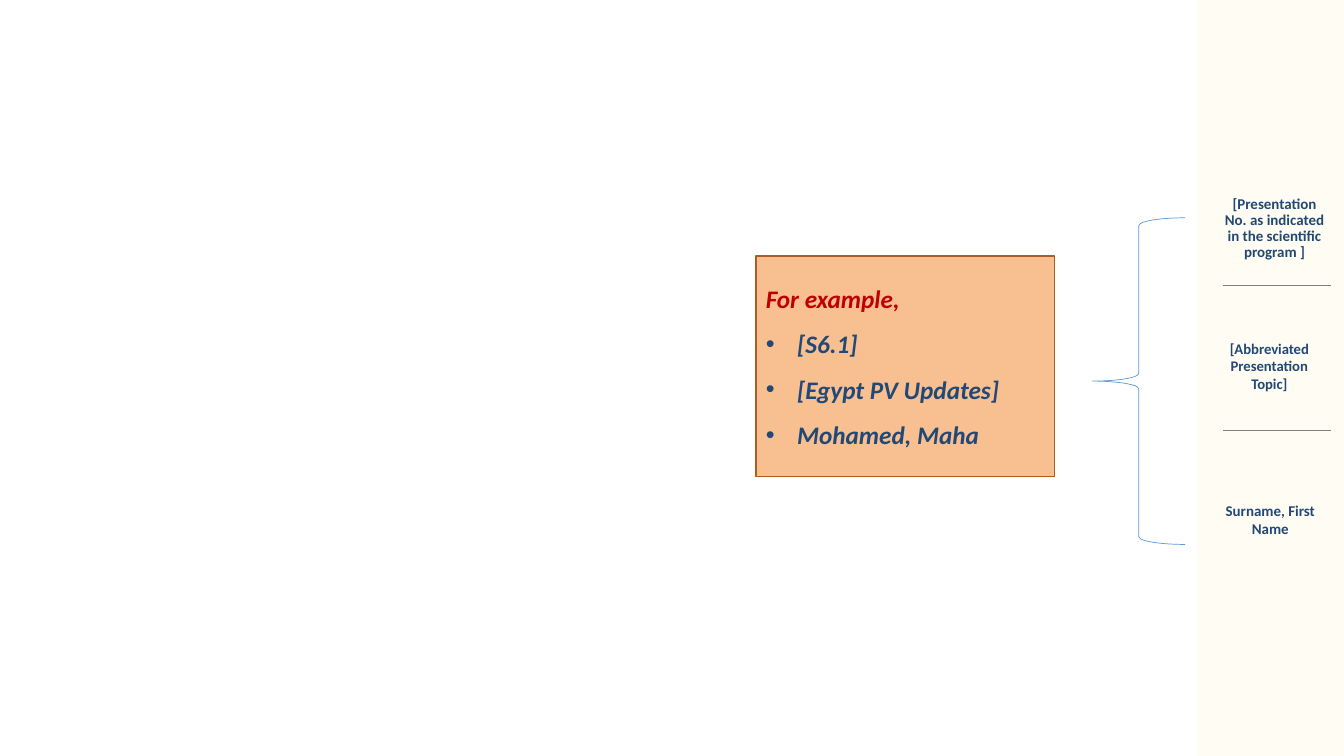
from lxml import etree
from pptx import Presentation
from pptx.dml.color import RGBColor
from pptx.enum.shapes import MSO_CONNECTOR, MSO_SHAPE
from pptx.enum.text import MSO_ANCHOR, PP_ALIGN
from pptx.oxml.ns import qn
from pptx.util import Cm, Pt

RECTANGLE, LEFT_BRACE = MSO_SHAPE.RECTANGLE, MSO_SHAPE.LEFT_BRACE
STRAIGHT = MSO_CONNECTOR.STRAIGHT
LEFT, CENTER = PP_ALIGN.LEFT, PP_ALIGN.CENTER
MIDDLE = MSO_ANCHOR.MIDDLE

CREAM = RGBColor(0xFF, 0xFC, 0xF3)
PEACH = RGBColor(0xF8, 0xBF, 0x90)
BROWN = RGBColor(0xAF, 0x5C, 0x24)
RED = RGBColor(0xC0, 0x00, 0x00)
NAVY = RGBColor(0x22, 0x49, 0x76)
GREY = RGBColor(0x80, 0x80, 0x80)
BLUE = RGBColor(0x5B, 0x9B, 0xD5)

FONT = "Calibri"
SLIDE_WIDTH, SLIDE_HEIGHT = Cm(33.87), Cm(19.05)


def write(paragraph, text, size=18, color=NAVY, italic=False, align=LEFT,
          spacing=1.0, indent=0, hanging=0, bullet=None):
    properties = paragraph._p.get_or_add_pPr()
    properties.set("marL", str(indent))
    properties.set("indent", str(-hanging))
    if bullet:
        etree.SubElement(properties, qn("a:buFont"), typeface="Arial")
        etree.SubElement(properties, qn("a:buChar"), char=bullet)
    paragraph.alignment = align
    paragraph.line_spacing = spacing
    run = paragraph.add_run()
    run.text = text
    run.font.name = FONT
    run.font.size = Pt(size)
    run.font.bold = True
    run.font.italic = italic
    run.font.color.rgb = color


def add_preset(slide, preset, box, fill=None, line=None, line_width=1):
    shape = slide.shapes.add_shape(preset, *box)
    shape.shadow.inherit = False
    if fill is None:
        shape.fill.background()
    else:
        shape.fill.solid()
        shape.fill.fore_color.rgb = fill
    if line is None:
        shape.line.fill.background()
    else:
        shape.line.color.rgb = line
        shape.line.width = Pt(line_width)
    return shape


def add_example(slide, box):
    """Filled box with a heading and a bulleted example."""
    example = add_preset(slide, RECTANGLE, box, PEACH, BROWN)
    frame = example.text_frame
    frame.word_wrap = True
    frame.vertical_anchor = MIDDLE
    write(frame.paragraphs[0], "For example,", color=RED, italic=True)
    for item in ("[S6.1]", "[Egypt PV Updates]", "Mohamed, Maha"):
        write(frame.add_paragraph(), item, italic=True, spacing=1.5,
              indent=Cm(0.79), hanging=Cm(0.79), bullet="•")


def add_side_panel(slide, box):
    """Cream panel with three labels parted by thin lines."""
    left, top, width, height = box
    add_preset(slide, RECTANGLE, box, CREAM)

    # Labels: text, left, top, width, height, format
    labels = (
        ("[Presentation No. as indicated in the scientific program ]",
         0.17, 4.83, 3.29, 1.19, dict(size=10.7, spacing=0.9, indent=Cm(0.25))),
        ("[Abbreviated Presentation Topic]",
         0.17, 8.43, 3.28, 1.6, dict(size=10.5)),
        ("Surname, First Name",
         0.4, 12.52, 2.87, 1.17, dict(size=10.7)),
    )
    for text, x, y, label_width, label_height, style in labels:
        label = slide.shapes.add_textbox(left + Cm(x), top + Cm(y),
                                         Cm(label_width), Cm(label_height))
        label.text_frame.word_wrap = True
        write(label.text_frame.paragraphs[0], text, align=CENTER, **style)

    # Dividers
    for y in (Cm(7.19), Cm(10.85)):
        divider = slide.shapes.add_connector(
            STRAIGHT, left + Cm(0.65), top + y, left + Cm(3.35), top + y)
        divider.line.color.rgb = GREY
        divider.line.width = Pt(0.5)
        etree.SubElement(divider._element.spPr, qn("a:effectLst"))


def main():
    presentation = Presentation()
    presentation.slide_width = SLIDE_WIDTH
    presentation.slide_height = SLIDE_HEIGHT
    slide = presentation.slides.add_slide(presentation.slide_layouts[6])

    panel_left = Cm(30.18)
    add_side_panel(slide, (panel_left, 0, SLIDE_WIDTH - panel_left, SLIDE_HEIGHT))
    add_example(slide, (Cm(19.05), Cm(6.45), Cm(7.52), Cm(5.56)))

    # Brace linking the example to the panel
    add_preset(slide, LEFT_BRACE, (Cm(27.53), Cm(5.49), Cm(2.34), Cm(8.23)),
               line=BLUE, line_width=0.5)

    presentation.save("out.pptx")


if __name__ == "__main__":
    main()
